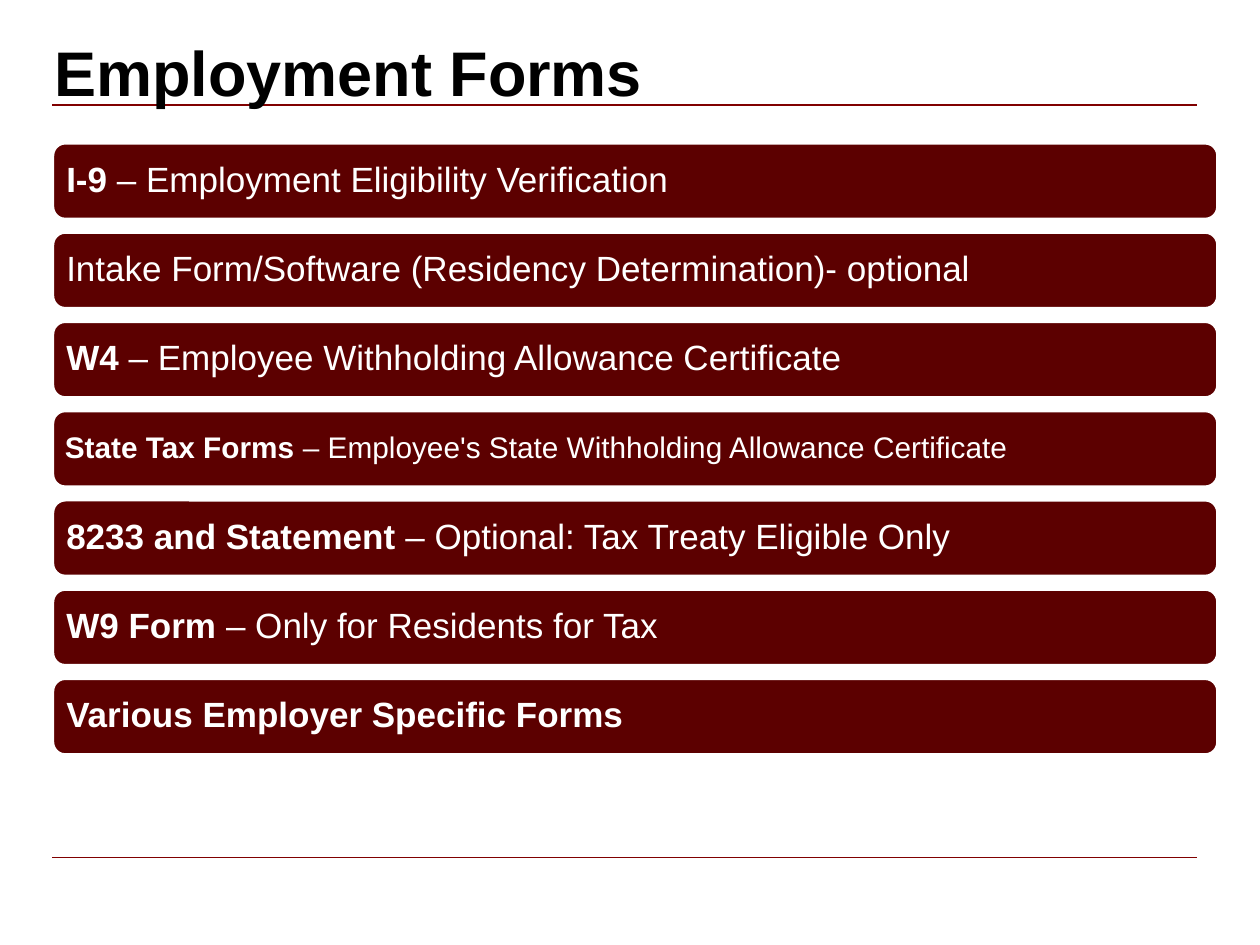
from lxml import etree
from pptx import Presentation
from pptx import util as u
from pptx.dml import color
from pptx.enum import shapes, text
from pptx.oxml import ns

COLORS = {"bar": "5C0000", "rule": "800000", "white": "FFFFFF", "black": "000000"}
FONT = "Arial"
COLS, ROWS = 120, 90
LEFT = 5
FORMS = [
    ("I-9", " – Employment Eligibility Verification", 20),
    ("", "Intake Form/Software (Residency Determination)- optional", 20),
    ("W4", " – Employee Withholding Allowance Certificate", 20),
    ("State Tax Forms ", "– Employee's State Withholding Allowance Certificate", 17),
    ("8233 and Statement ", "– Optional: Tax Treaty Eligible Only", 20),
    ("W9 Form ", "– Only for Residents for Tax", 20),
    ("Various Employer Specific Forms", "", 20),
]


def tint(name):
    return color.RGBColor.from_string(COLORS[name])


def write(para, words, size=20, bold=False, hue="white"):
    run = para.add_run()
    run.text = words
    font = run.font
    font.name, font.size, font.bold = FONT, u.Pt(size), bold
    font.color.rgb = tint(hue)


class Deck:
    def __init__(self):
        self.show = Presentation()
        self.show.slide_width = u.Inches(10)
        self.show.slide_height = u.Inches(7.5)
        self.slide = self.show.slides.add_slide(self.show.slide_layouts[6])

    def grid(self, x, y, *size):
        steps = (self.show.slide_width / COLS, self.show.slide_height / ROWS)
        return [round(n * steps[i % 2]) for i, n in enumerate((x, y, *size))]

    def rule(self, row):
        ends = self.grid(LEFT, row, 114, row)
        line = self.slide.shapes.add_connector(shapes.MSO_CONNECTOR.STRAIGHT, *ends)
        line.line.color.rgb = tint("rule")
        line.line.width = u.Pt(0.75)
        etree.SubElement(line._element.spPr, ns.qn("a:effectLst"))

    def title(self, words):
        box = self.slide.shapes.add_textbox(*self.grid(4, 4, 105, 7))
        frame = box.text_frame
        frame.word_wrap = True
        frame.vertical_anchor = text.MSO_ANCHOR.BOTTOM
        write(frame.paragraphs[0], words, size=36, bold=True, hue="black")

    def bar(self, row, lead, rest, size):
        kind = shapes.MSO_SHAPE.ROUNDED_RECTANGLE
        bar = self.slide.shapes.add_shape(kind, *self.grid(LEFT, row, 111, 7.3))
        bar.shadow.inherit = False
        bar.fill.solid()
        bar.fill.fore_color.rgb = tint("bar")
        bar.line.color.rgb = tint("white")
        bar.line.width = u.Pt(2)
        frame = bar.text_frame
        frame.word_wrap = True
        frame.vertical_anchor = text.MSO_ANCHOR.MIDDLE
        pad = u.Inches(size / 250)
        frame.margin_left = frame.margin_right = pad
        frame.margin_top = frame.margin_bottom = pad
        para = frame.paragraphs[0]
        para.alignment = text.PP_ALIGN.LEFT
        para.line_spacing = 0.9
        for words, bold in ((lead, True), (rest, False)):
            if words:
                write(para, words, size=size, bold=bold)


def main():
    deck = Deck()
    for row in (10, 81.7):
        deck.rule(row)
    deck.title("Employment Forms")
    for i, form in enumerate(FORMS):
        deck.bar(13.6 + 8.5 * i, *form)
    deck.show.save("out.pptx")


if __name__ == "__main__":
    main()
